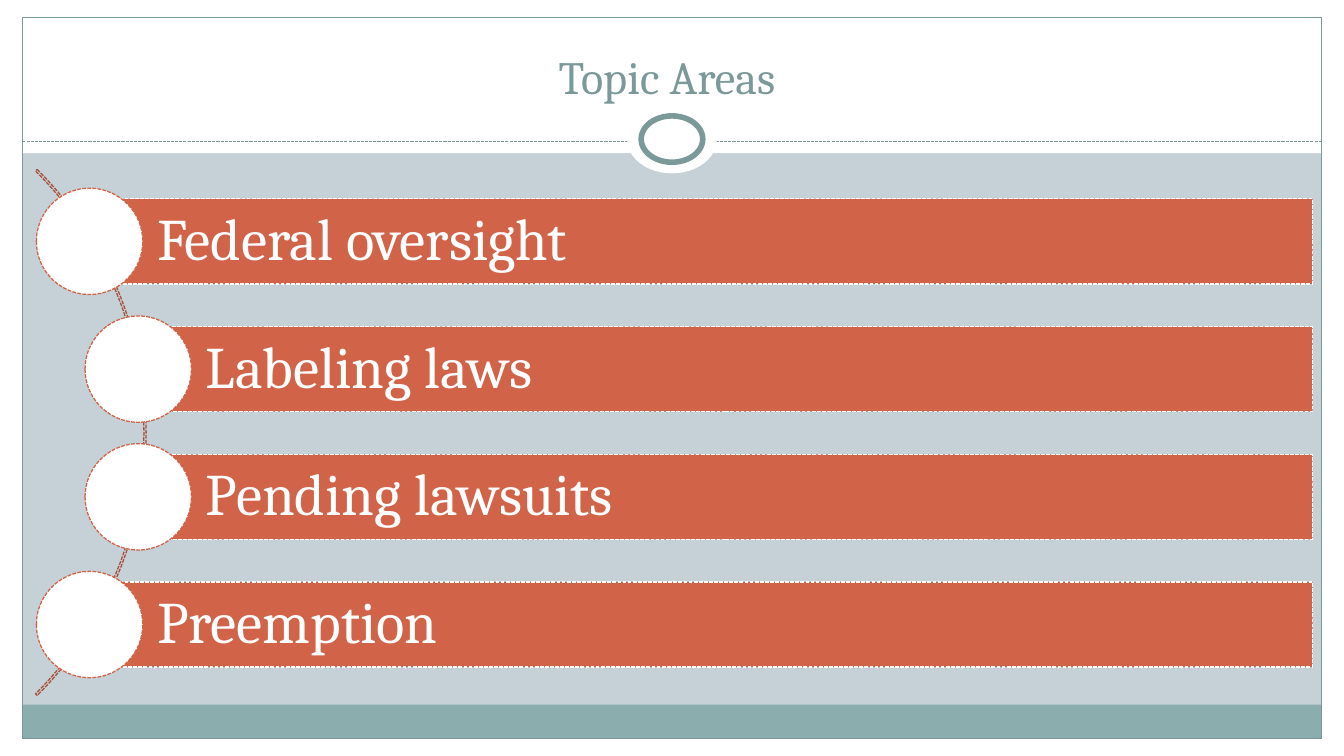
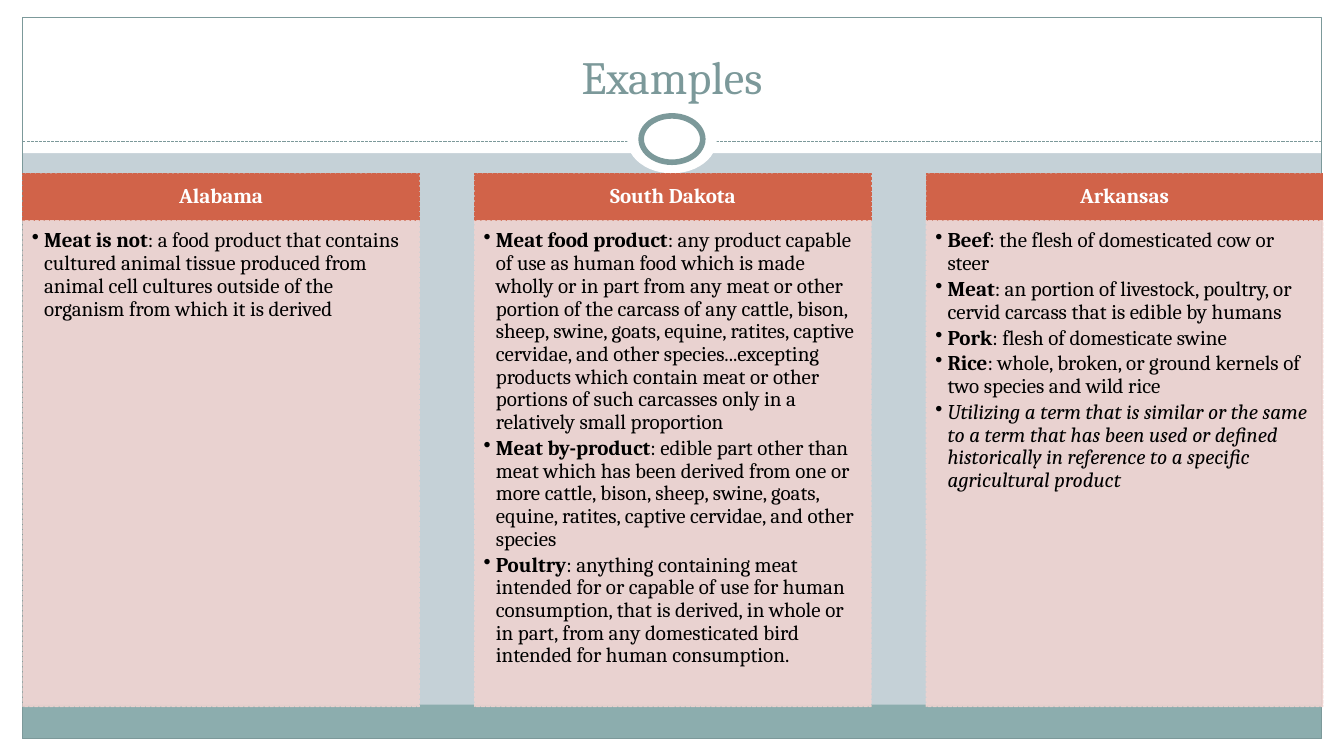
from lxml.etree import SubElement
from pptx import Presentation
from pptx.dml.color import RGBColor
from pptx.enum.dml import MSO_LINE
from pptx.enum.shapes import MSO_CONNECTOR, MSO_SHAPE
from pptx.enum.text import MSO_ANCHOR, PP_ALIGN
from pptx.oxml.ns import qn
from pptx.util import Inches, Pt

COLORS = {
    "white": "FFFFFF", "black": "000000", "mist": "C5D1D7", "teal": "7C999A",
    "sage": "8CADAE", "rust": "D16349", "brick": "A74F3A", "blush": "EED3D0",
}
FONT = "Cambria"
COLUMNS, ROWS = 120, 75

deck = Presentation()
deck.slide_width, deck.slide_height = Inches(13.33), Inches(7.5)
COLUMN, ROW = deck.slide_width / COLUMNS, deck.slide_height / ROWS


def draw(page, kind, cells, fill=None, line=None, width=0.9, dash=None, frame=None):
    left, top, wide, high = cells
    box = page.shapes.add_shape(
        kind, round(left * COLUMN), round(top * ROW), round(wide * COLUMN), round(high * ROW))
    box.shadow.inherit = False
    if fill:
        box.fill.solid()
        box.fill.fore_color.rgb = RGBColor.from_string(COLORS[fill])
    else:
        box.fill.background()
    if line:
        box.line.color.rgb = RGBColor.from_string(COLORS[line])
        box.line.width = Pt(width)
        box.line.dash_style = dash
    else:
        box.line.fill.background()
    for name, value in (frame or {}).items():
        setattr(box.text_frame, name, value)
    return box


def write(para, text, color, formats, layout=None):
    span = para.add_run()
    span.text = text
    span.font.color.rgb = RGBColor.from_string(COLORS[color])
    for name, value in {"name": FONT, **formats}.items():
        setattr(span.font, name, value)
    for name, value in (layout or {}).items():
        setattr(para, name, value)


layout = deck.slide_layouts[5]
layout.background.fill.solid()
layout.background.fill.fore_color.rgb = RGBColor.from_string(COLORS["mist"])
for holder in list(layout.placeholders):
    if holder.placeholder_format.idx:
        holder.element.getparent().remove(holder.element)
    else:
        holder.left, holder.top = round(4 * COLUMN), round(2.5 * ROW)
        holder.width, holder.height = round(112 * COLUMN), round(8.3 * ROW)
        holder.text_frame.vertical_anchor = MSO_ANCHOR.BOTTOM

pages = []
for title in ("Topic Areas ", "Examples"):
    page = deck.slides.add_slide(layout)
    write(page.shapes.title.text_frame.paragraphs[0], title, "teal",
          {"size": Pt(33)}, {"alignment": PP_ALIGN.CENTER})
    pages.append(page)
topics_page, examples_page = pages

furniture = []
for cells, fill in (
    ((0, 73.3, COLUMNS, 1.7), "white"),
    ((0, 0, COLUMNS, 15.2), "white"),
    ((0, 0, 2, ROWS), "white"),
    ((118, 0, 2, ROWS), "white"),
    ((2, 69.9, 116, 3.4), "sage"),
):
    furniture.append(draw(topics_page, MSO_SHAPE.RECTANGLE, cells, fill))
furniture.append(draw(topics_page, MSO_SHAPE.RECTANGLE, (2, 1.7, 116, 71.6), None, "teal", 0.75))

divider = topics_page.shapes.add_connector(
    MSO_CONNECTOR.STRAIGHT, round(2 * COLUMN), round(14 * ROW), round(118 * COLUMN), round(14 * ROW))
divider.line.color.rgb = RGBColor.from_string(COLORS["teal"])
divider.line.width = Pt(0.75)
divider.line.dash_style = MSO_LINE.SQUARE_DOT
SubElement(divider.element.spPr, qn("a:effectLst"))
furniture.append(divider)

furniture.append(draw(topics_page, MSO_SHAPE.OVAL, (56, 10.5, 8, 6.7), "white"))
furniture.append(draw(topics_page, MSO_SHAPE.OVAL, (57.25, 11.5, 5.5, 4.6), "white", "teal", 4))
for part in furniture:
    layout.shapes.element.append(part.element)

arc = draw(topics_page, MSO_SHAPE.BLOCK_ARC, (-53.4, 6, 66.45, 73.8), None, "brick",
           dash=MSO_LINE.SQUARE_DOT)
for index, value in enumerate((189, 27, 0.003)):
    arc.adjustments[index] = value

BAR_FRAME = {
    "word_wrap": True, "vertical_anchor": MSO_ANCHOR.MIDDLE, "margin_left": Inches(0.67),
    "margin_right": Inches(0.12), "margin_top": Inches(0.12), "margin_bottom": Inches(0.12),
}
BAR_TOP, BAR_STEP, BAR_HEIGHT, BAR_RIGHT = 19.73, 12.67, 8.44, 117.2
DISC_WIDTH, DISC_HEIGHT = 9.5, 10.55
topics = (("Federal oversight", 8), ("Labeling laws", 12.35),
          ("Pending lawsuits", 12.35), ("Preemption", 8))
for index, (topic, left) in enumerate(topics):
    top = BAR_TOP + index * BAR_STEP
    bar = draw(topics_page, MSO_SHAPE.RECTANGLE, (left, top, BAR_RIGHT - left, BAR_HEIGHT),
               "rust", "white", dash=MSO_LINE.SQUARE_DOT, frame=BAR_FRAME)
    write(bar.text_frame.paragraphs[0], topic, "white", {"size": Pt(42)},
          {"alignment": PP_ALIGN.LEFT, "line_spacing": 0.9})
    draw(topics_page, MSO_SHAPE.OVAL,
         (left - DISC_WIDTH / 2, top + (BAR_HEIGHT - DISC_HEIGHT) / 2, DISC_WIDTH, DISC_HEIGHT),
         "white", "rust", dash=MSO_LINE.SQUARE_DOT)

HEADER_FRAME = {
    "word_wrap": True, "vertical_anchor": MSO_ANCHOR.MIDDLE, "margin_left": Inches(0.12),
    "margin_right": Inches(0.12), "margin_top": Inches(0.07), "margin_bottom": Inches(0.07),
}
PANEL_FRAME = {
    "word_wrap": True, "vertical_anchor": MSO_ANCHOR.TOP, "margin_left": Inches(0.09),
    "margin_right": Inches(0.12), "margin_top": Inches(0.09), "margin_bottom": Inches(0.13),
}
BULLET_LAYOUT = {"alignment": PP_ALIGN.LEFT, "line_spacing": 0.9, "space_after": Pt(2.25)}
BOLD = {"size": Pt(15), "bold": True}
PLAIN = {"size": Pt(15), "bold": False}
ITALIC = {"size": Pt(15), "italic": True}
PANEL_LEFT, PANEL_STEP, PANEL_WIDTH = 2.05, 40.33, 35.4
HEADER_TOP, HEADER_HEIGHT, PANEL_HEIGHT = 17.2, 4.7, 48.2
states = {
    "Alabama": (
        (("Meat is not", BOLD),
         (": a food product that contains cultured animal tissue produced from animal cell "
          "cultures outside of the organism from which it is derived", PLAIN)),
    ),
    "South Dakota": (
        (("Meat food product", BOLD),
         (": any product capable of use as human food which is made wholly or in part from any "
          "meat or other portion of the carcass of any cattle, bison, sheep, swine, goats, "
          "equine, ratites, captive cervidae, and other species...excepting products which "
          "contain meat or other portions of such carcasses only in a relatively small "
          "proportion", PLAIN)),
        (("Meat by-product", BOLD),
         (": edible part other than meat which has been derived from one or more cattle, bison, "
          "sheep, swine, goats, equine, ratites, captive cervidae, and other species", PLAIN)),
        (("Poultry", BOLD),
         (": anything containing meat intended for or capable of use for human consumption, that "
          "is derived, in whole or in part, from any domesticated bird intended for human "
          "consumption.", PLAIN)),
    ),
    "Arkansas": (
        (("Beef", BOLD), (": the flesh of domesticated cow or steer", PLAIN)),
        (("Meat", BOLD),
         (": an portion of livestock, poultry, or cervid carcass that is edible by humans", PLAIN)),
        (("Pork", BOLD), (": flesh of domesticate swine", PLAIN)),
        (("Rice", BOLD),
         (": whole, broken, or ground kernels of two species and wild rice", PLAIN)),
        (("Utilizing a term that is similar or the same to a term that has been used or defined "
          "historically in reference to a specific agricultural product", ITALIC),),
    ),
}
for index, (state, definitions) in enumerate(states.items()):
    left = PANEL_LEFT + index * PANEL_STEP
    header = draw(examples_page, MSO_SHAPE.RECTANGLE,
                  (left, HEADER_TOP, PANEL_WIDTH, HEADER_HEIGHT),
                  "rust", "rust", dash=MSO_LINE.SQUARE_DOT, frame=HEADER_FRAME)
    write(header.text_frame.paragraphs[0], state, "white", BOLD,
          {"alignment": PP_ALIGN.CENTER, "line_spacing": 0.9})
    panel = draw(examples_page, MSO_SHAPE.RECTANGLE,
                 (left, HEADER_TOP + HEADER_HEIGHT, PANEL_WIDTH, PANEL_HEIGHT),
                 "blush", "blush", dash=MSO_LINE.SQUARE_DOT, frame=PANEL_FRAME)
    for tint in panel.element.spPr.iter(qn("a:srgbClr")):
        SubElement(tint, qn("a:alpha"), val="90000")
    for number, definition in enumerate(definitions):
        frame = panel.text_frame
        para = frame.add_paragraph() if number else frame.paragraphs[0]
        for text, formats in definition:
            write(para, text, "black", formats, BULLET_LAYOUT)
        properties = para._p.get_or_add_pPr()
        properties.set("marL", str(Inches(0.12)))
        properties.set("indent", str(-Inches(0.12)))
        SubElement(properties, qn("a:buChar"), char="•")

deck.save("out.pptx")
